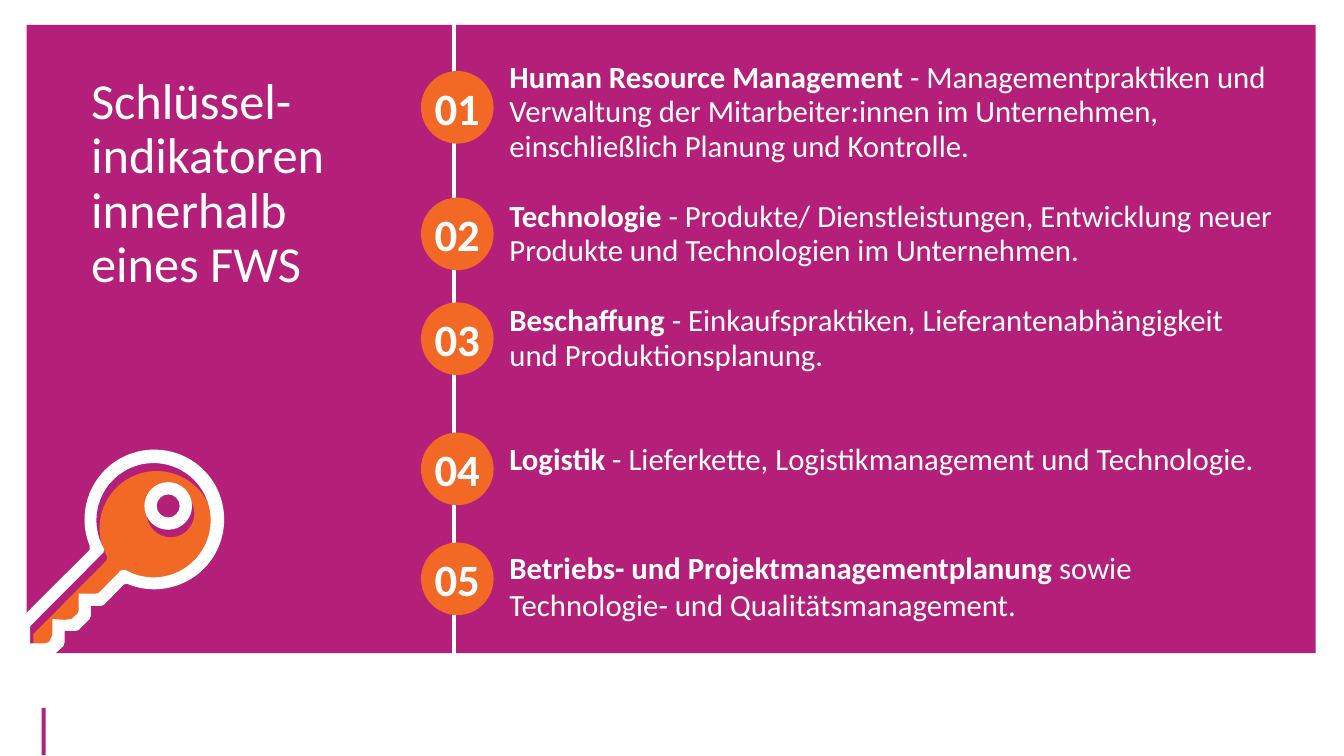
import math
from dataclasses import dataclass

from lxml import etree
from pptx import Presentation, util as u
from pptx.dml.color import RGBColor
from pptx.enum import shapes, text
from pptx.oxml.ns import qn


@dataclass(frozen=True)
class Theme:
    font: str = "Calibri"
    magenta: RGBColor = RGBColor(0xB4, 0x1F, 0x7A)
    orange: RGBColor = RGBColor(0xF1, 0x69, 0x24)
    white: RGBColor = RGBColor(0xFF, 0xFF, 0xFF)
    title_size: u.Pt = u.Pt(36)
    number_size: u.Pt = u.Pt(32)
    body_size: u.Pt = u.Pt(22)


def arc(center_x, center_y, radius, start=0, end=360):
    count = math.ceil((end - start) / 90)
    step = math.radians(end - start) / count
    pull = 4 / 3 * math.tan(step / 4)

    def place(angle, lean):
        cos, sin = math.cos(angle), math.sin(angle)
        return center_x + radius * (cos - lean * sin), center_y + radius * (sin + lean * cos)

    angles = [math.radians(start) + step * i for i in range(count + 1)]
    curves = [(place(a, pull), place(b, -pull), place(b, 0)) for a, b in zip(angles, angles[1:])]
    return [place(angles[0], 0), *curves]


def trace(contour, dx=0, dy=0):
    points = [contour[0]]
    for item in contour[1:]:
        is_curve = isinstance(item[0], tuple)
        points.extend(item if is_curve else (points[-1], item, item))
    return [(u.Cm(x + dx), u.Cm(y + dy)) for x, y in points]


class Painter:
    def __init__(self, page, theme):
        self.page = page
        self.theme = theme

    def paint(self, shape, color):
        shape.shadow.inherit = False
        shape.fill.solid()
        shape.fill.fore_color.rgb = color
        shape.line.fill.background()
        return shape

    def style(self, para, size, bold=None):
        para.font.name = self.theme.font
        para.font.size = size
        para.font.color.rgb = self.theme.white
        para.font.bold = bold

    def preset(self, kind, color, left, top, width, height):
        shape = self.page.shapes.add_shape(
            kind, u.Cm(left), u.Cm(top), u.Cm(width), u.Cm(height))
        return self.paint(shape, color)

    def outline(self, color, outer, inner):
        builder = self.page.shapes.build_freeform(*outer[0])
        builder.add_line_segments(outer[1:], close=True)
        builder.move_to(*inner[0])
        builder.add_line_segments(inner[1:], close=True)
        shape = self.paint(builder.convert_to_shape(), color)
        nodes = list(shape.element.iter(qn("a:lnTo")))
        for curve, *others in zip(nodes[::3], nodes[1::3], nodes[2::3]):
            curve.tag = qn("a:cubicBezTo")
            for node in others:
                curve.append(node[0])
                node.getparent().remove(node)

    def title(self, words, left, top, width, height):
        holder = self.page.shapes.title
        holder.left, holder.top = u.Cm(left), u.Cm(top)
        holder.width, holder.height = u.Cm(width), u.Cm(height)
        self.page.shapes.element.append(holder.element)
        frame = holder.text_frame
        frame.text = words
        frame.word_wrap = True
        frame.auto_size = text.MSO_AUTO_SIZE.NONE
        frame.vertical_anchor = text.MSO_ANCHOR.TOP
        para = frame.paragraphs[0]
        para.alignment = text.PP_ALIGN.LEFT
        para.line_spacing = 0.9
        self.style(para, self.theme.title_size)

    def vertical_line(self, x, top, bottom):
        line = self.page.shapes.add_connector(
            shapes.MSO_CONNECTOR.STRAIGHT, u.Cm(x), u.Cm(top), u.Cm(x), u.Cm(bottom))
        line.line.color.rgb = self.theme.white
        line.line.width = u.Pt(3)
        etree.SubElement(line.element.spPr, qn("a:effectLst"))

    def badge(self, number, left, top, size):
        circle = self.preset(shapes.MSO_SHAPE.OVAL, self.theme.orange, left, top, size, size)
        frame = circle.text_frame
        frame.margin_left = frame.margin_right = frame.margin_top = frame.margin_bottom = 0
        frame.word_wrap = False
        frame.vertical_anchor = text.MSO_ANCHOR.MIDDLE
        frame.text = f"{number:02}"
        para = frame.paragraphs[0]
        para.alignment = text.PP_ALIGN.CENTER
        self.style(para, self.theme.number_size, True)

    def indicators(self, items, left, top, width, height):
        box = self.page.shapes.add_textbox(u.Cm(left), u.Cm(top), u.Cm(width), u.Cm(height))
        frame = box.text_frame
        frame.word_wrap = True
        frame.margin_left = u.Cm(1.4)
        for index, (term, detail, gap, spacing) in enumerate(items):
            para = frame.add_paragraph() if index else frame.paragraphs[0]
            if gap:
                para.space_before = u.Pt(gap)
            para.line_spacing = spacing
            self.style(para, self.theme.body_size)
            span = para.add_run()
            span.text = term + " "
            span.font.bold = True
            para.add_run().text = detail


LINE = u.Pt(24.8)
INDICATORS = [
    ("Human Resource Management",
     "- Managementpraktiken und Verwaltung der Mitarbeiter:innen im Unternehmen, "
     "einschließlich Planung und Kontrolle.", 0, LINE),
    ("Technologie",
     "- Produkte/ Dienstleistungen, Entwicklung neuer Produkte und Technologien "
     "im Unternehmen.", 24.8, LINE),
    ("Beschaffung",
     "- Einkaufspraktiken, Lieferantenabhängigkeit und Produktionsplanung.", 24.8, LINE),
    ("Logistik", "- Lieferkette, Logistikmanagement und Technologie.", 49.6, LINE),
    ("Betriebs- und Projektmanagementplanung",
     "sowie Technologie- und Qualitätsmanagement.", 51.6, 1.0),
]
BADGE_TOPS = [1.79, 4.98, 7.62, 10.9, 13.67]

KEY_BODY = [
    (2.06, 15.16), (2.06, 15.6), (2.03, 15.67), (1.88, 15.8), (1.7, 15.82), (1.4, 15.8),
    (1.4, 16.2), (1.32, 16.38), (1.22, 16.41), (0.84, 16.41), (0.84, 15.98),
    (2.69, 14.12), *arc(3.95, 13.31, 1.44, 150, 480),
    (3.12, 14.58), (2.57, 15.14), (2.49, 15.16),
]
KEY_RIM = [
    (0.48, 15.65), (0.51, 15.6), (2.26, 13.86), *arc(3.89, 13.09, 1.76, 158, 473),
    (3.12, 14.73), (2.62, 15.24), (2.54, 15.27), (2.29, 15.27), (2.29, 15.52),
    (2.26, 15.6), (1.98, 15.88), (1.9, 15.9), (1.63, 15.9), (1.63, 16.18),
    (1.6, 16.28), (1.35, 16.51), (0.48, 16.51),
]


def main():
    deck = Presentation()
    deck.slide_width, deck.slide_height = u.Cm(33.87), u.Cm(19.05)
    theme = Theme()
    painter = Painter(deck.slides.add_slide(deck.slide_layouts[5]), theme)

    painter.preset(shapes.MSO_SHAPE.RECTANGLE, theme.magenta, 0.67, 0.63, 32.49, 15.83)
    painter.preset(shapes.MSO_SHAPE.RECTANGLE, theme.magenta, 1.05, 17.84, 0.1, 1.19)
    painter.title("Schlüssel-indikatoren innerhalb eines FWS", 2.04, 1.78, 7.92, 7.75)
    painter.indicators(INDICATORS, 11.44, 1.38, 21.03, 14.63)
    painter.vertical_line(11.44, 0.56, 16.48)
    for number, top in enumerate(BADGE_TOPS, 1):
        painter.badge(number, 10.61, top, 1.83)

    painter.outline(theme.orange, trace(KEY_BODY), trace(arc(4.3, 12.94, 0.6)))
    painter.outline(theme.white, trace(KEY_RIM), trace(KEY_BODY, -0.08, -0.2))
    painter.outline(theme.white, trace(arc(4.24, 12.75, 0.6)), trace(arc(4.24, 12.75, 0.29)))
    deck.save("out.pptx")


if __name__ == "__main__":
    main()
